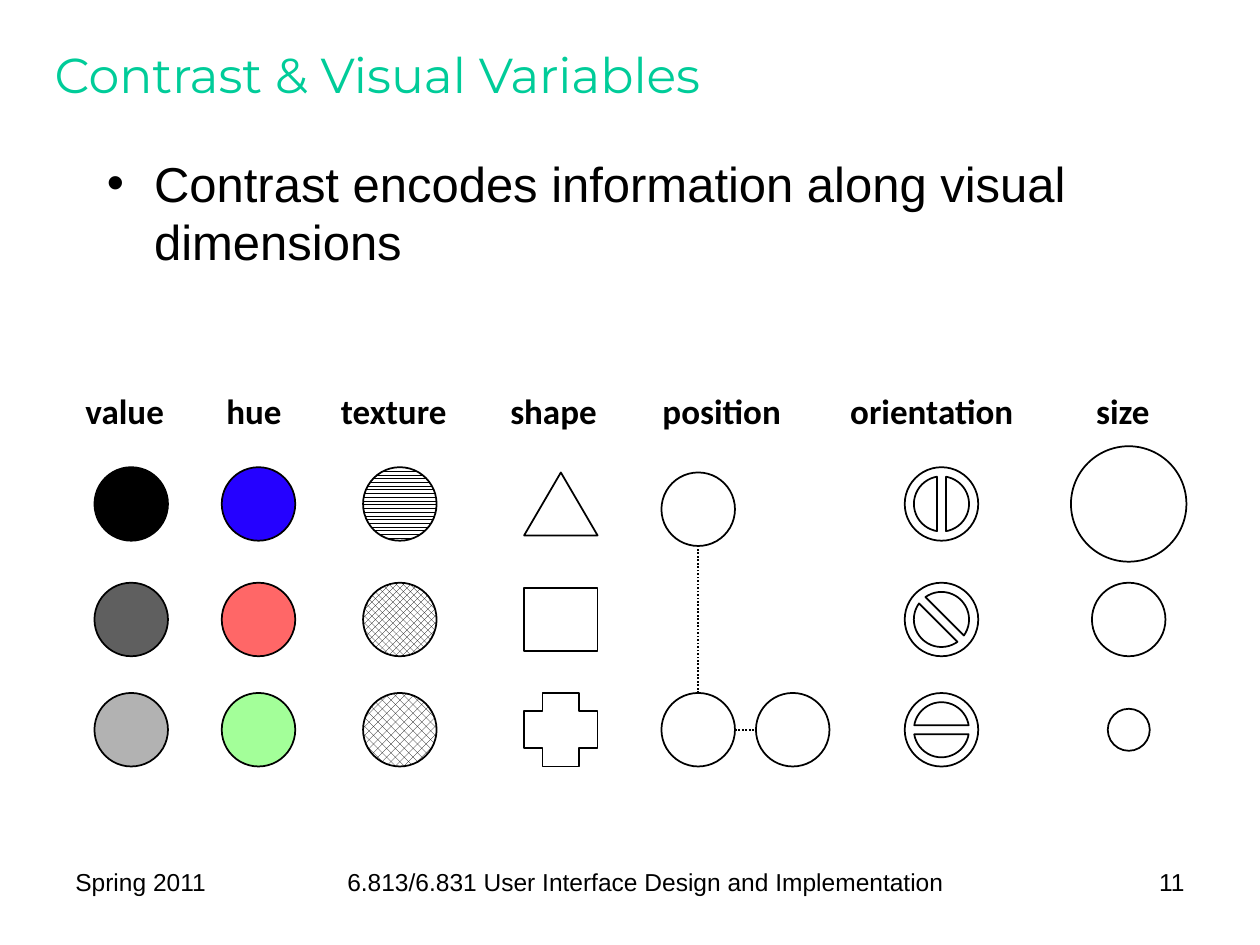
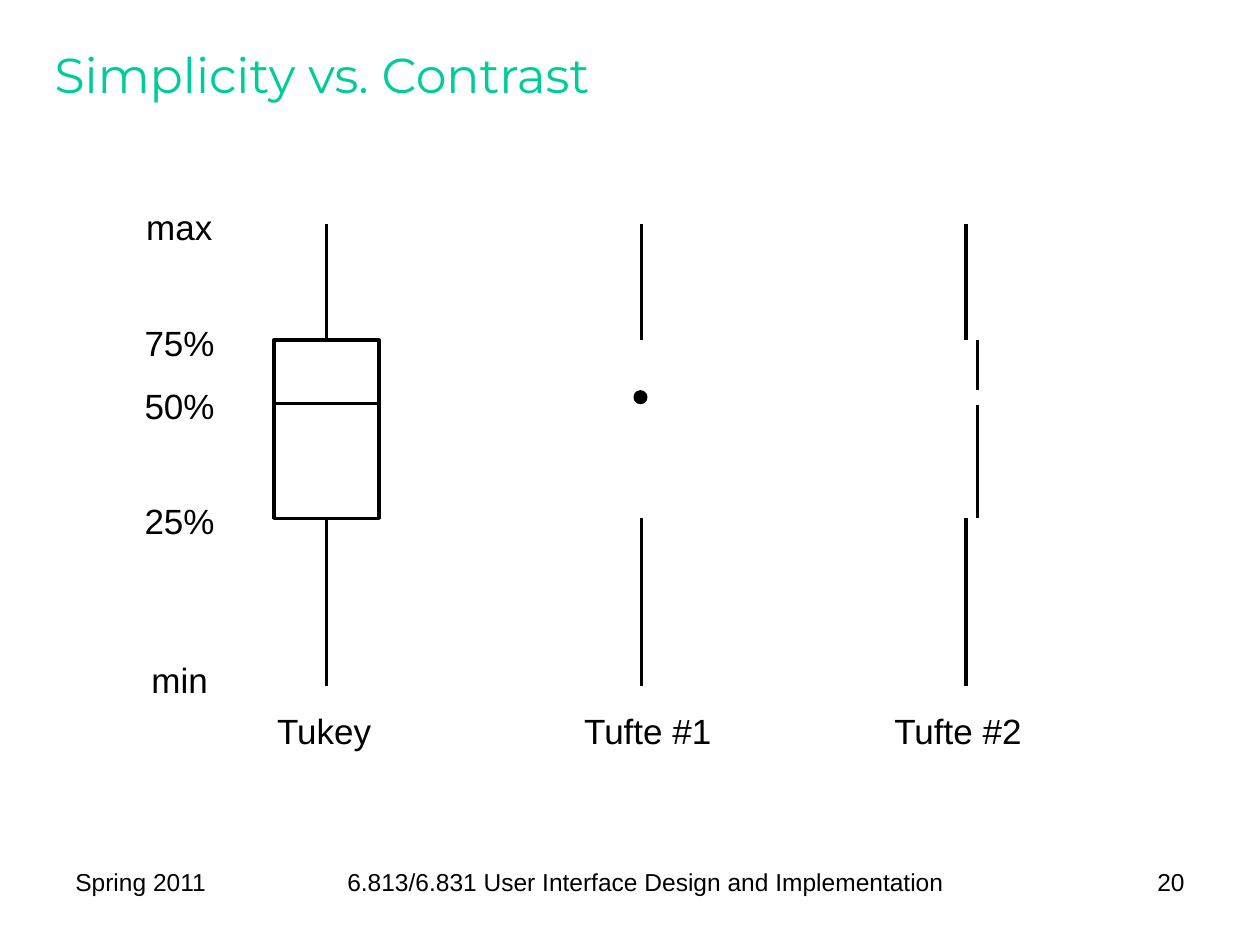
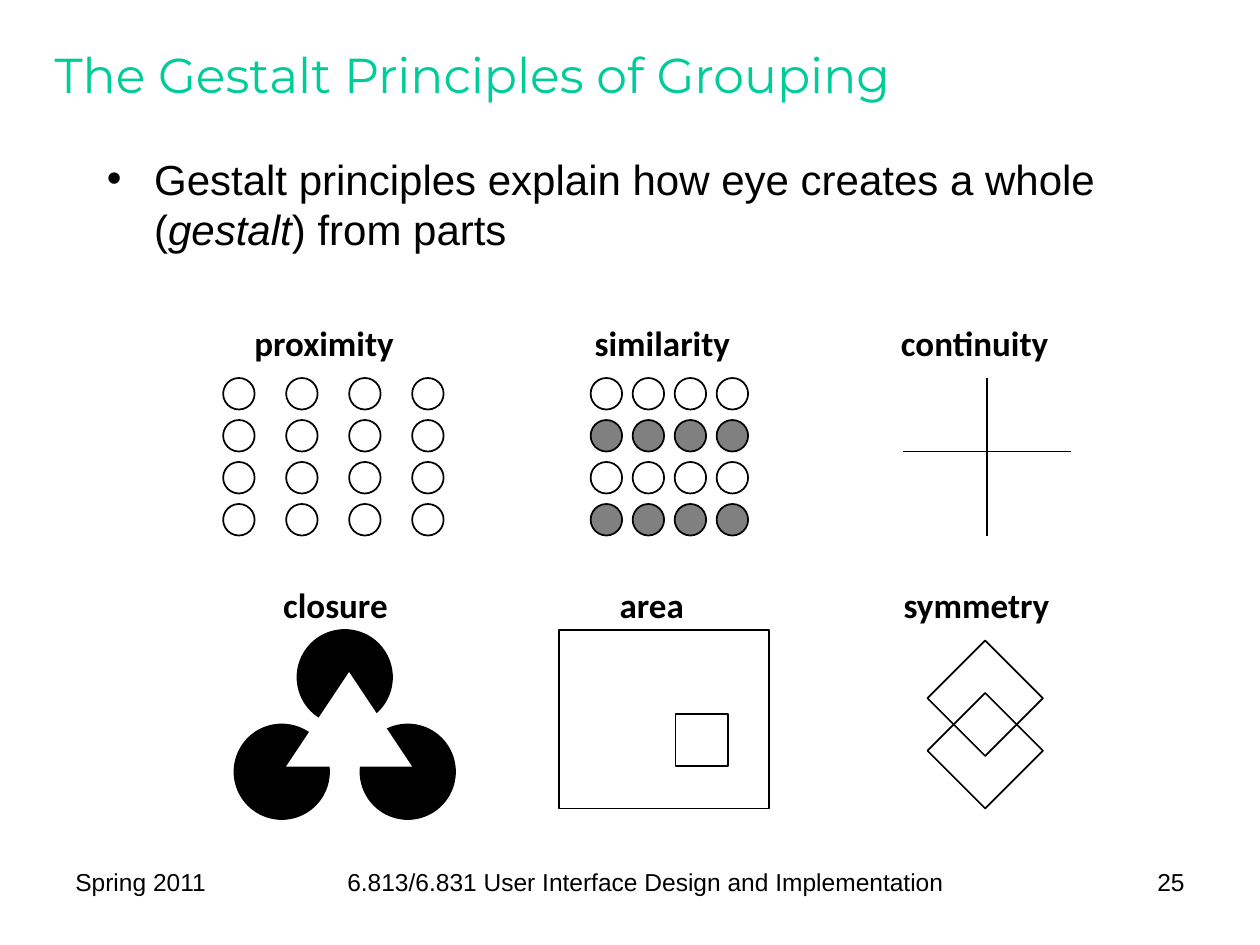
import pptx
import pptx.util
import pptx.dml.color
import pptx.enum.dml
import pptx.enum.shapes
import pptx.enum.text
import lxml.etree

Pt = pptx.util.Pt
KIND = pptx.enum.shapes.MSO_SHAPE
WEAVE = pptx.enum.dml.MSO_PATTERN
ALIGN = pptx.enum.text.PP_ALIGN
FIT = pptx.enum.text.MSO_AUTO_SIZE
DRAWML = "{http://schemas.openxmlformats.org/drawingml/2006/main}"

BLACK, WHITE, GRAY, GREEN = "000000", "FFFFFF", "808080", "00CC99"
COURSE = "6.813/6.831 User Interface Design and Implementation"

STYLES = {
    "title": {"name": "Montserrat", "size": Pt(28)},
    "body": {"name": "Arial", "size": Pt(28)},
    "small": {"name": "Arial", "size": Pt(24)},
    "foot": {"name": "Arial", "size": Pt(14)},
    "plain": {"name": "Arial", "size": Pt(20)},
    "head": {"name": "Calibri", "size": Pt(20), "bold": True},
}


def tint(fill, color):
    """Fill with a hex colour, or with nothing when it is None."""
    if color is None:
        fill.background()
    else:
        fill.solid()
        fill.fore_color.rgb = pptx.dml.color.RGBColor.from_string(color)


def mark(slide, kind, left, top, wide, high, color=WHITE, edge=BLACK, width=1):
    """Add a preset shape with fill and outline."""
    shape = slide.shapes.add_shape(kind, Pt(left), Pt(top), Pt(wide), Pt(high))
    shape.shadow.inherit = False
    tint(shape.fill, color)
    tint(shape.line.fill, edge)
    if edge:
        shape.line.width = Pt(width)
    return shape


deck = pptx.Presentation()
deck.slide_width, deck.slide_height = Pt(720), Pt(540)
texts = []  # box, runs (every second one italic), style, alignment

# Titles, bullets and footers
pages = []
for title, number, style, body in [
    ("Contrast & Visual Variables", "11", "body",
     ["Contrast encodes information along visual dimensions"]),
    ("Simplicity vs. Contrast", "20", None, None),
    ("The Gestalt Principles of Grouping", "25", "small",
     ["Gestalt principles explain how eye creates a whole (", "gestalt", ") from parts"]),
]:
    page = deck.slides.add_slide(deck.slide_layouts[5])
    pages.append(page)
    head = page.shapes.title
    head.left, head.top, head.width, head.height = Pt(24), Pt(12), Pt(666), Pt(60)
    head.text_frame.vertical_anchor = pptx.enum.text.MSO_ANCHOR.MIDDLE
    texts.append((head, [title], "title", ALIGN.LEFT))
    if body:
        box = page.shapes.add_textbox(Pt(54), Pt(84), Pt(612), Pt(396))
        texts.append((box, body, style, ALIGN.LEFT))
    for left, wide, words, align in [
        (36, 108, "Spring 2011", ALIGN.LEFT),
        (150, 438, COURSE, ALIGN.CENTER),
        (594, 90, number, ALIGN.RIGHT),
    ]:
        box = page.shapes.add_textbox(Pt(left), Pt(492), Pt(wide), Pt(37.5))
        texts.append((box, [words], "foot", align))
vary, plot, group = pages

# Visual variables: one column each, three rows
DISC = 42
sizes = [66, 42, 24]
forms = [(KIND.ISOSCELES_TRIANGLE, 36), (KIND.RECTANGLE, 36), (KIND.CROSS, DISC)]
grays = [BLACK, "5F5F5F", "B2B2B2"]
hues = ["2501FF", "FF6767", "A3FF99"]
weaves = [WEAVE.ZIG_ZAG, WEAVE.LARGE_CHECKER_BOARD, WEAVE.PERCENT_50]
for row, mid in enumerate([288, 354, 417]):
    top = mid - DISC / 2
    mark(vary, KIND.OVAL, 54, top, DISC, DISC, grays[row])
    mark(vary, KIND.OVAL, 126.75, top, DISC, DISC, hues[row])
    disc = mark(vary, KIND.OVAL, 207.5, top, DISC, DISC)
    disc.fill.patterned()
    disc.fill.pattern = weaves[row]
    disc.fill.fore_color.rgb = pptx.dml.color.RGBColor.from_string(BLACK)
    disc.fill.back_color.rgb = pptx.dml.color.RGBColor.from_string(WHITE)
    kind, high = forms[row]
    mark(vary, kind, 299.5, mid - high / 2, DISC, high)
    ring = mark(vary, KIND.NO_SYMBOL, 517, top, DISC, DISC)
    ring.adjustments[0] = 0.125
    ring.rotation = [45, 0, 315][row]
    size = sizes[row]
    mark(vary, KIND.OVAL, 645 - size / 2, mid - size / 2, size, size)
for left, top in [(378, 270), (378, 396), (432, 396)]:
    mark(vary, KIND.OVAL, left, top, DISC, DISC)

# Box plots
chest = mark(plot, KIND.RECTANGLE, 156.5, 194.25, 60, 102, width=2)
mark(plot, KIND.OVAL, 363, 224, 6, 6, BLACK, width=2)

# Gestalt groups
for row in range(4):
    for col in range(4):
        top = 216 + 24 * row
        mark(group, KIND.OVAL, 127.5 + 36 * col, top, 18, 18)
        mark(group, KIND.OVAL, 337.5 + 24 * col, top, 18, 18, GRAY if row % 2 else WHITE)
for left, top in [(134, 414), (170, 360), (206, 414)]:
    mark(group, KIND.OVAL, left, top, 54, 54, BLACK)
mark(group, KIND.ISOSCELES_TRIANGLE, 163.5, 384, 72, 54, edge=None)
mark(group, KIND.RECTANGLE, 319.5, 360, 120, 102)
mark(group, KIND.RECTANGLE, 386, 408, 30, 30)
for top in [366, 396]:
    mark(group, KIND.DIAMOND, 530, top, 66, 66, None)

# Lines: slide, from, to, width, dotted, side of the box plot to join
lines = [
    (vary, 399, 396, 399, 312, 1, True, None),
    (vary, 420, 417, 432, 417, 1, True, None),
    (plot, 156.5, 230.5, 216.5, 230.5, 2, False, None),
    (plot, 558.5, 194.25, 558.5, 223, 2, False, None),
    (plot, 558.5, 296.25, 558.5, 231.5, 2, False, None),
    (group, 564, 216, 564, 306, 1, False, None),
    (group, 516, 258, 612, 258, 1, False, None),
]
for mid in [186.5, 366.5, 552]:
    for start, end, side in [(194.25, 128.25, 0), (296.25, 392.25, 2)]:
        lines.append((plot, mid, start, mid, end, 2, False, side if mid == 186.5 else None))
for page, x1, y1, x2, y2, width, dotted, side in lines:
    line = page.shapes.add_connector(
        pptx.enum.shapes.MSO_CONNECTOR.STRAIGHT, Pt(x1), Pt(y1), Pt(x2), Pt(y2))
    if side is not None:
        line.begin_connect(chest, side)
    tint(line.line.fill, BLACK)
    line.line.width = Pt(width)
    if dotted:
        line.line.dash_style = pptx.enum.dml.MSO_LINE.ROUND_DOT
    lxml.etree.SubElement(line._element.spPr, DRAWML + "effectLst")

# Labels: slide, style, words, middle, top, width
labels = [(vary, "head", words, mid, 219, wide) for words, mid, wide in [
    ("value", 74.5, 65.5), ("hue", 147.5, 50.5), ("texture", 228.5, 81.5),
    ("shape", 320.75, 72.5), ("position", 417.5, 92), ("orientation", 537.75, 118),
    ("size", 645.5, 52.5)]]
labels += [(plot, "plain", words, 102.75, top, wide) for words, top, wide in [
    ("max", 114, 52.5), ("75%", 180, 54.5), ("50%", 216, 54.5),
    ("25%", 282, 54.5), ("min", 373, 46.5)]]
labels += [(plot, "plain", words, mid, 402, wide) for words, mid, wide in [
    ("Tukey", 185.75, 69), ("Tufte #1", 370.75, 88), ("Tufte #2", 548, 88)]]
labels += [(group, "head", words, mid, top, wide) for words, mid, top, wide in [
    ("proximity", 190.5, 180, 104.5), ("similarity", 383.75, 180, 102),
    ("continuity", 562.75, 180, 110), ("closure", 197.5, 330, 85.5),
    ("area", 374.75, 330, 55.5), ("symmetry", 563.5, 330, 108.5)]]
for page, style, words, mid, top, wide in labels:
    box = page.shapes.add_textbox(Pt(mid - wide / 2), Pt(top), Pt(wide), Pt(31))
    texts.append((box, [words], style, ALIGN.LEFT))

# Write and format all text
for box, parts, style, align in texts:
    frame = box.text_frame
    label = style in ("plain", "head")
    frame.word_wrap = not label
    frame.auto_size = FIT.SHAPE_TO_FIT_TEXT if label else FIT.NONE
    para = frame.paragraphs[0]
    para.alignment = align
    for place, words in enumerate(parts):
        run = para.add_run()
        run.text = words
        for key, value in STYLES[style].items():
            setattr(run.font, key, value)
        if place % 2:
            run.font.italic = True
        tint(run.font.fill, GREEN if style == "title" else BLACK)
    if style in ("body", "small"):
        para.space_before = Pt(STYLES[style]["size"].pt * 0.2)
        props = para._p.get_or_add_pPr()
        props.set("marL", str(Pt(27)))
        props.set("indent", str(Pt(-27)))
        lxml.etree.SubElement(props, DRAWML + "buFont", typeface="Arial")
        lxml.etree.SubElement(props, DRAWML + "buChar", char="•")

deck.save("out.pptx")
